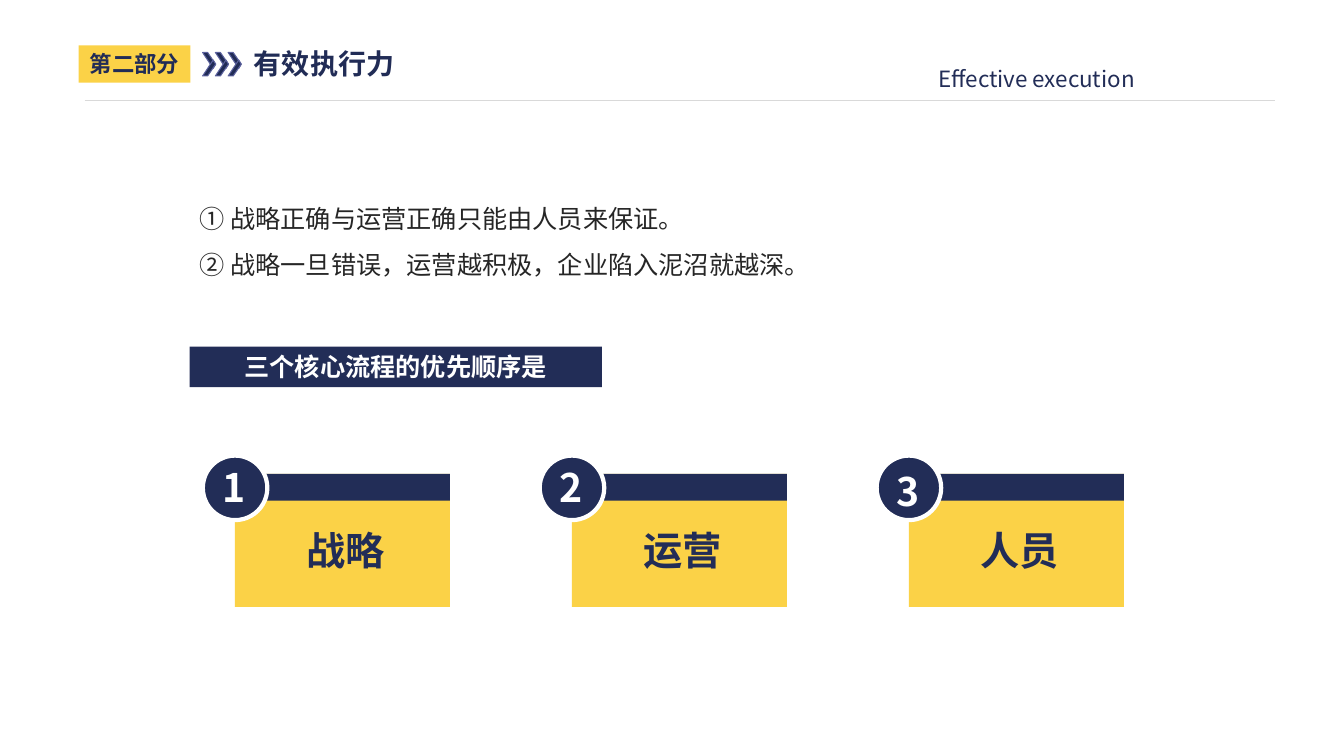
import pptx
import pptx.util
import pptx.dml.color
import pptx.enum.shapes
import pptx.enum.text
import lxml.etree

HUE = {"navy": "222D57", "ink": "212C56", "gold": "FBD247", "edge": "5C629E",
       "rule": "D9D9D9", "text": "262626", "white": "FFFFFF"}
FACE = "Noto Sans CJK SC"
FORM = pptx.enum.shapes.MSO_SHAPE
SIDE = pptx.enum.text.PP_ALIGN
FIT = pptx.enum.text.MSO_AUTO_SIZE
rgb = {name: pptx.dml.color.RGBColor.from_string(code) for name, code in HUE.items()}

deck = pptx.Presentation()
deck.slide_width = pptx.util.Inches(13.33)
deck.slide_height = pptx.util.Inches(7.5)
page = deck.slides.add_slide(deck.slide_layouts[6])
art = page.shapes
CELL = deck.slide_height / 90  # grid of 160 columns by 90 rows


def paint(shape, fill, edge=None, width=0):
    shape.shadow.inherit = False
    shape.fill.solid()
    shape.fill.fore_color.rgb = rgb[fill]
    if edge:
        shape.line.color.rgb = rgb[edge]
        shape.line.width = pptx.util.Pt(width)
    else:
        shape.line.fill.background()


def write(shape, lines, size, hue, bold=True, side=SIDE.CENTER, space=None, fit=FIT.SHAPE_TO_FIT_TEXT):
    frame = shape.text_frame
    frame.word_wrap = True
    frame.auto_size = fit
    frame.text = "\n".join(lines)
    looks = {"name": FACE, "size": pptx.util.Pt(size), "bold": bold}
    for para in frame.paragraphs:
        para.alignment = side
        para.line_spacing = space
        for run in para.runs:
            for key, value in looks.items():
                setattr(run.font, key, value)
            run.font.color.rgb = rgb[hue]
            east = lxml.etree.SubElement(run._r.get_or_add_rPr(), pptx.oxml.ns.qn("a:ea"))
            east.set("typeface", FACE)


# Header rule
rule = art.add_connector(pptx.enum.shapes.MSO_CONNECTOR.STRAIGHT,
                         *[round(n * CELL) for n in (10.08, 11.9, 151.8, 11.9)])
rule.line.color.rgb = rgb["rule"]
rule.line.width = pptx.util.Pt(0.5)
lxml.etree.SubElement(rule._element.spPr, pptx.oxml.ns.qn("a:effectLst"))

# Filled bars: section tag and banner
bars = [("第二部分", 16, "gold", "ink", (9.36, 5.4, 13.32, 4.44)),
        ("三个核心流程的优先顺序是", 18, "navy", "white", (22.56, 41.28, 49.08, 4.8))]
for words, size, fill, hue, box in bars:
    bar = art.add_shape(FORM.RECTANGLE, *[round(n * CELL) for n in box])
    paint(bar, fill)
    write(bar, [words], size, hue, fit=FIT.NONE)

# Three chevrons, each made of an upper and a lower stroke
for step in range(3):
    for flip in (1, -1):
        dots = [((24.12 + 1.52 * step + dx) * CELL, (7.65 + flip * dy) * CELL)
                for dx, dy in ((0, -1.4), (1.26, 0.5), (1.56, 0), (0.6, -1.4))]
        pen = art.build_freeform(*dots[0])
        pen.add_line_segments(dots[1:], close=True)
        paint(pen.convert_to_shape(), "ink", "edge", 0.75)

# Free text: title, English title, two statements
notes = [
    (["有效执行力"], (29.04, 4.92, 21.36, 5.28), 20, "ink", True, None),
    (["Effective execution"], (110.52, 7.2, 39.12, 4.44), 16, "navy", False, None),
    (["① 战略正确与运营正确只能由人员来保证。",
      "② 战略一旦错误，运营越积极，企业陷入泥沼就越深。"],
     (22.56, 21.84, 76.8, 11.52), 18, "text", False, 1.5),
]
for lines, box, size, hue, bold, space in notes:
    note = art.add_textbox(*[round(n * CELL) for n in box])
    write(note, lines, size, hue, bold, SIDE.LEFT, space)

# Three numbered cards
for step, word in enumerate(("战略", "运营", "人员")):
    left = 27.96 + 40.1 * step
    parts = [(FORM.RECTANGLE, (0, 56.4, 25.6, 15.84), "gold", None),
             (FORM.RECTANGLE, (0, 56.4, 25.6, 3.2), "navy", None),
             (FORM.OVAL, (-3.82, 54.24, 7.68, 7.68), "navy", "white")]
    for form, (dx, top, wide, high), fill, edge in parts:
        part = art.add_shape(form, *[round(n * CELL) for n in (left + dx, top, wide, high)])
        paint(part, fill, edge, 3)
    drop = 0.48 if step == 2 else 0
    tags = [(str(step + 1), (-2.74, 54.6 + drop, 5.28, 6.84), "white"),
            (word, (1.98, 62.04, 22.44, 6.84), "navy")]
    for words, (dx, top, wide, high), hue in tags:
        tag = art.add_textbox(*[round(n * CELL) for n in (left + dx, top, wide, high)])
        write(tag, [words], 28, hue)

deck.save("out.pptx")
